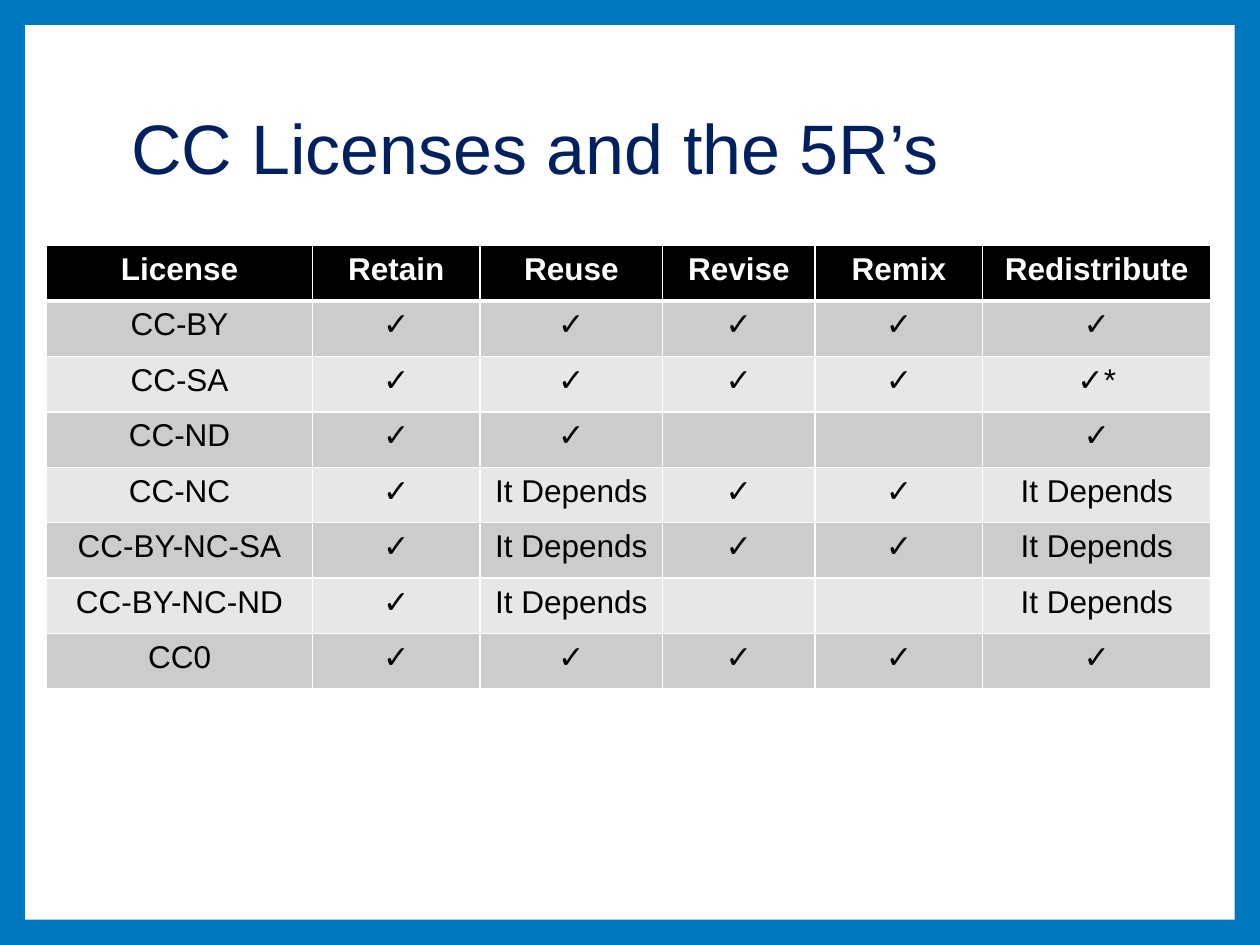
from lxml import etree
from pptx import Presentation
from pptx.dml.color import RGBColor
from pptx.enum.shapes import MSO_SHAPE
from pptx.enum.text import MSO_ANCHOR, MSO_AUTO_SIZE, PP_ALIGN
from pptx.oxml.ns import qn
from pptx.util import Inches, Pt

RECTANGLE = MSO_SHAPE.RECTANGLE
MIDDLE = MSO_ANCHOR.MIDDLE
NO_FIT = MSO_AUTO_SIZE.NONE
LEFT, CENTER = PP_ALIGN.LEFT, PP_ALIGN.CENTER

BLUE = RGBColor(0x00, 0x77, 0xBE)
NAVY = RGBColor(0x00, 0x20, 0x60)
WHITE = RGBColor(0xFF, 0xFF, 0xFF)
BLACK = RGBColor(0x00, 0x00, 0x00)
BANDS = (RGBColor(0xCC, 0xCC, 0xCC), RGBColor(0xE7, 0xE7, 0xE7))

TITLE = "CC Licenses and the 5R’s"
YES, DEPENDS, NO = "✓", "It Depends", ""
HEADINGS = ("License", "Retain", "Reuse", "Revise", "Remix", "Redistribute")
LICENSES = [
    ("CC-BY", YES, YES, YES, YES, YES),
    ("CC-SA", YES, YES, YES, YES, "✓*"),
    ("CC-ND", YES, YES, NO, NO, YES),
    ("CC-NC", YES, DEPENDS, YES, YES, DEPENDS),
    ("CC-BY-NC-SA", YES, DEPENDS, YES, YES, DEPENDS),
    ("CC-BY-NC-ND", YES, DEPENDS, NO, NO, DEPENDS),
    ("CC0", YES, YES, YES, YES, YES),
]

SLIDE_WIDTH, SLIDE_HEIGHT = 10, 7.5
MARGIN = 0.2
TITLE_BOX = (0.94, 0.67, 8.1, 1.07)
TABLE_LEFT, TABLE_TOP = 0.37, 1.95
COLUMN_WIDTHS = (2.11, 1.33, 1.45, 1.21, 1.33, 1.81)
ROW_HEIGHT = 0.44


def write(frame, text, size=18, color=BLACK, bold=False, align=CENTER, spacing=None):
    paragraph = frame.paragraphs[0]
    paragraph.alignment = align
    paragraph.line_spacing = spacing
    font = paragraph.font
    if text:
        run = paragraph.add_run()
        run.text = text
        font = run.font
    font.name, font.size, font.bold = "Arial", Pt(size), bold
    font.color.rgb = color


def add_borders(cell, bottom):
    properties = cell._tc.get_or_add_tcPr()
    for side, width in (("L", 1), ("R", 1), ("T", 1), ("B", bottom)):
        line = etree.SubElement(properties, qn(f"a:ln{side}"), w=str(Pt(width)))
        fill = etree.SubElement(line, qn("a:solidFill"))
        etree.SubElement(fill, qn("a:srgbClr"), val=str(WHITE))


def add_panel(slide):
    panel = slide.shapes.add_shape(
        RECTANGLE, Inches(MARGIN), Inches(MARGIN),
        Inches(SLIDE_WIDTH - 2 * MARGIN), Inches(SLIDE_HEIGHT - 2 * MARGIN))
    panel.shadow.inherit = False
    panel.fill.solid()
    panel.fill.fore_color.rgb = WHITE
    panel.line.fill.background()
    slide.shapes._spTree.insert(2, panel._element)


def add_title(slide):
    title = slide.shapes.title
    title.left, title.top, title.width, title.height = map(Inches, TITLE_BOX)
    frame = title.text_frame
    frame.word_wrap = True
    frame.auto_size = NO_FIT
    frame.vertical_anchor = MIDDLE
    write(frame, TITLE, size=40, color=NAVY, align=LEFT, spacing=0.9)


def add_license_table(slide):
    rows = [HEADINGS, *LICENSES]
    table = slide.shapes.add_table(
        len(rows), len(HEADINGS), Inches(TABLE_LEFT), Inches(TABLE_TOP),
        Inches(sum(COLUMN_WIDTHS)), Inches(ROW_HEIGHT * len(rows))).table
    for column, width in zip(table.columns, COLUMN_WIDTHS):
        column.width = Inches(width)
    for index, entries in enumerate(rows):
        table.rows[index].height = Inches(ROW_HEIGHT)
        heading = index == 0
        for cell, entry in zip(table.rows[index].cells, entries):
            add_borders(cell, bottom=3 if heading else 1)
            cell.fill.solid()
            cell.fill.fore_color.rgb = BLACK if heading else BANDS[(index - 1) % 2]
            write(cell.text_frame, entry, color=WHITE if heading else BLACK, bold=heading)


def main():
    deck = Presentation()
    deck.slide_width, deck.slide_height = Inches(SLIDE_WIDTH), Inches(SLIDE_HEIGHT)
    slide = deck.slides.add_slide(deck.slide_layouts[5])
    slide.background.fill.solid()
    slide.background.fill.fore_color.rgb = BLUE
    add_panel(slide)
    add_title(slide)
    add_license_table(slide)
    deck.save("out.pptx")


if __name__ == "__main__":
    main()
